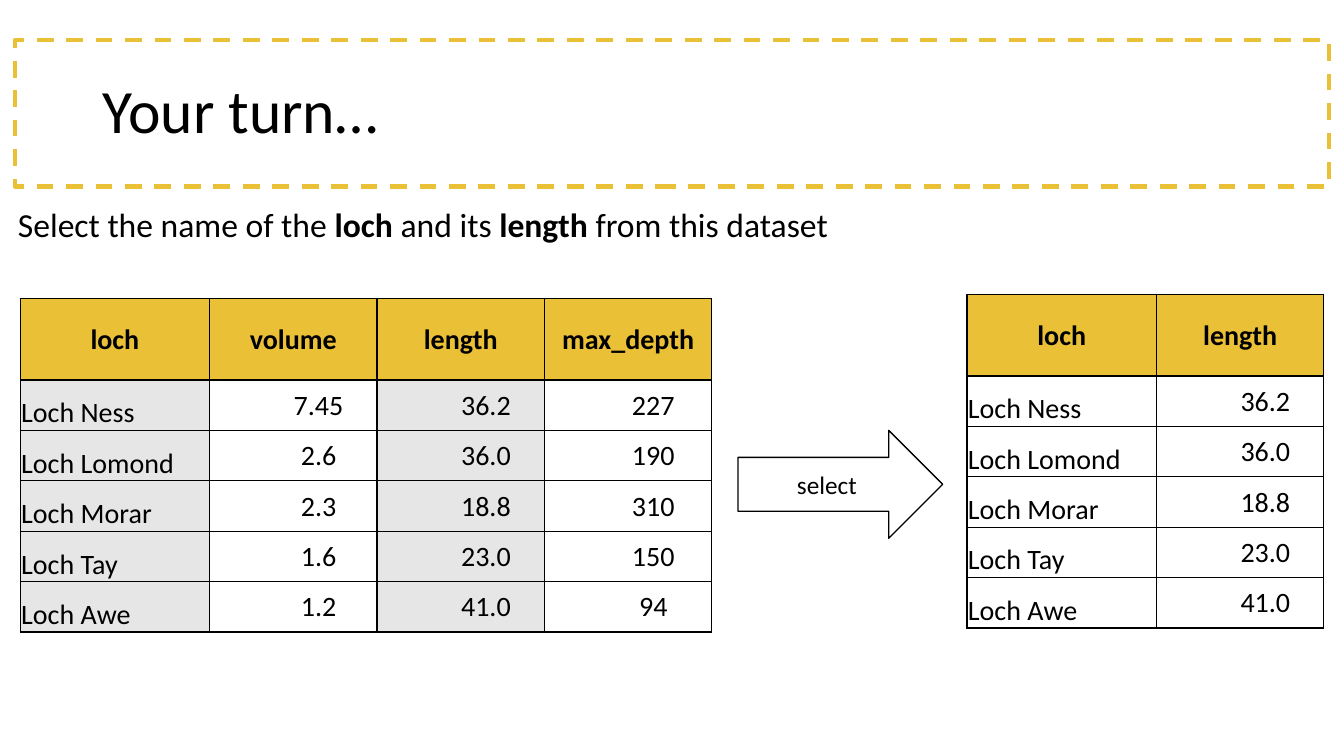
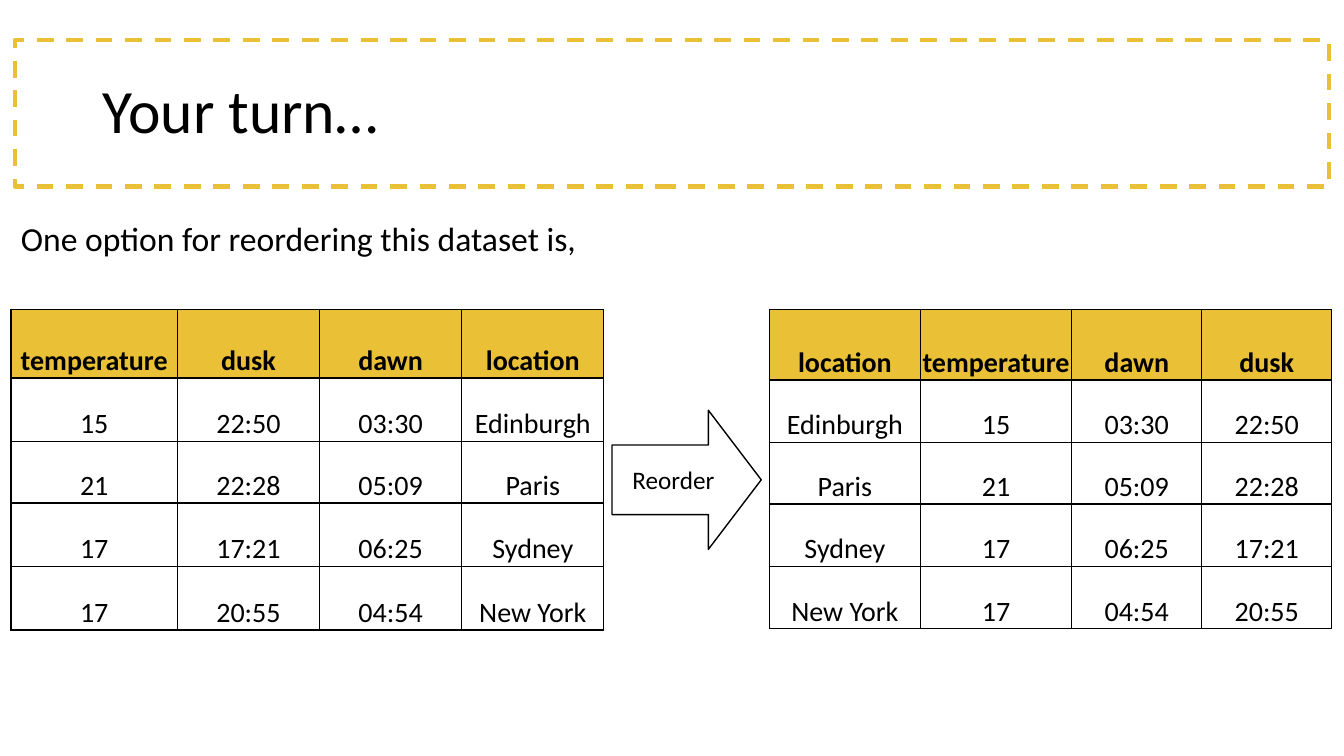
from dataclasses import dataclass

from lxml import etree
from pptx import Presentation, util as u
from pptx.dml.color import RGBColor
from pptx.enum import dml, shapes, text
from pptx.oxml import ns

CELL = u.Inches(0.1)  # one step of the layout grid
TITLE_ONLY = 5


@dataclass(frozen=True)
class Theme:
    font: str = "Calibri"
    ink: str = "000000"
    paper: str = "FFFFFF"
    gold: str = "EAC036"
    grey: str = "E7E6E6"
    title: int = 44
    lead: int = 24
    table: int = 20
    label: int = 18
    thin: int = 1
    thick: int = 3


T = Theme()
MID, LOW = text.MSO_ANCHOR.MIDDLE, text.MSO_ANCHOR.BOTTOM
LEFT, MIDDLE = text.PP_ALIGN.LEFT, text.PP_ALIGN.CENTER

LOCHS = [
    ["loch", "volume", "length", "max_depth"],
    ["Loch Ness", "7.45", "36.2", "227"],
    ["Loch Lomond", "2.6", "36.0", "190"],
    ["Loch Morar", "2.3", "18.8", "310"],
    ["Loch Tay", "1.6", "23.0", "150"],
    ["Loch Awe", "1.2", "41.0", "94"],
]
CITIES = [
    ["temperature", "dusk", "dawn", "location"],
    ["15", "22:50", "03:30", "Edinburgh"],
    ["21", "22:28", "05:09", "Paris"],
    ["17", "17:21", "06:25", "Sydney"],
    ["17", "20:55", "04:54", "New York"],
]


def grid(*steps):
    return [round(step * CELL) for step in steps]


def put(item, **values):
    for name, value in values.items():
        setattr(item, name, value)


def paint(fill, color):
    fill.solid()
    fill.fore_color.rgb = RGBColor.from_string(color)


def style(font, size, bold=False):
    put(font, name=T.font, size=u.Pt(size), bold=bold)
    font.color.rgb = RGBColor.from_string(T.ink)


def pick(rows, *names):
    """Return the named columns, in the order given."""
    order = [rows[0].index(name) for name in names]
    return [[row[col] for col in order] for row in rows]


def band(slide):
    """Draw the dashed title frame and hand it to the slide's layout."""
    frame = slide.shapes.add_shape(
        shapes.MSO_SHAPE.RECTANGLE, *grid(1.5, 4, 130.3, 14.5))
    frame.shadow.inherit = False
    frame.fill.background()
    paint(frame.line.fill, T.gold)
    put(frame.line, width=u.Pt(T.thick), dash_style=dml.MSO_LINE.DASH)
    slide.slide_layout.shapes.element.insert(2, frame.element)


def head(slide):
    title = slide.shapes.title
    left, top, width, height = grid(9.2, 4, 115, 14.5)
    put(title, left=left, top=top, width=width, height=height)
    put(title.text_frame, text="Your turn…", vertical_anchor=MID)
    para = title.text_frame.paragraphs[0]
    put(para, alignment=LEFT, line_spacing=0.9)
    style(para.runs[0].font, T.title)


def lead(slide, place, *parts):
    """Add the task line; every second part is bold."""
    frame = slide.shapes.add_textbox(*grid(*place)).text_frame
    frame.word_wrap = True
    for i, part in enumerate(parts):
        run = frame.paragraphs[0].add_run()
        run.text = part
        style(run.font, T.lead, bold=i % 2 == 1)


def edge(cell):
    props = cell._tc.get_or_add_tcPr()
    for i, side in enumerate("LRTB"):
        line = etree.Element(ns.qn(f"a:ln{side}"), w=str(u.Pt(T.thin)))
        fill = etree.SubElement(line, ns.qn("a:solidFill"))
        etree.SubElement(fill, ns.qn("a:srgbClr"), val=T.ink)
        props.insert(i, line)


def fill_in(cell, words, color, anchor, align=MIDDLE, bold=False, inset=False):
    pad = u.Inches(0.01)
    put(cell, text=words, vertical_anchor=anchor, margin_left=pad,
        margin_right=pad, margin_top=pad, margin_bottom=0)
    paint(cell.fill, color)
    edge(cell)
    para = cell.text_frame.paragraphs[0]
    para.alignment = align
    if inset:
        para.level = 1
        props = para._p.get_or_add_pPr()
        props.set("marL", str(u.Inches(0.5)))
        props.set("indent", "0")
    style(para.runs[0].font, T.table, bold)


def loch_cell(col):
    if col == 0:
        return dict(anchor=LOW, align=LEFT)
    return dict(anchor=MID, inset=True)


def city_cell(col):
    return dict(anchor=LOW)


def table(slide, spot, data, wide, high, body, top=LOW, shade=()):
    """Add a table; body(col) gives the format of the cells below the header."""
    size = sum(wide), sum(high)
    item = slide.shapes.add_table(
        len(data), len(data[0]), *grid(*spot, *size)).table
    put(item, first_row=False, horz_banding=False)
    for col, width in zip(item.columns, grid(*wide)):
        col.width = width
    for row, height in zip(item.rows, grid(*high)):
        row.height = height
    for r, row in enumerate(data):
        for c, words in enumerate(row):
            if r == 0:
                look = dict(color=T.gold, anchor=top, bold=True)
            else:
                look = dict(color=T.grey if c in shade else T.paper, **body(c))
            fill_in(item.cell(r, c), words, **look)


def arrow(slide, place, words, tip=0.5):
    item = slide.shapes.add_shape(
        shapes.MSO_SHAPE.RIGHT_ARROW, *grid(*place))
    item.shadow.inherit = False
    item.adjustments[1] = tip
    paint(item.fill, T.paper)
    paint(item.line.fill, T.ink)
    item.line.width = u.Pt(T.thin)
    put(item.text_frame, text=words, vertical_anchor=MID)
    para = item.text_frame.paragraphs[0]
    para.alignment = MIDDLE
    style(para.runs[0].font, T.label)


def lochs(slide):
    lead(slide, (0.8, 19.7, 95.6, 5), "Select the name of the ", "loch",
         " and its ", "length ", "from this dataset")
    first, other = 18.8, 16.6
    look = dict(high=[8.1] + [5] * 5, body=loch_cell, top=MID)
    table(slide, (2, 29.6), LOCHS, [first] + [other] * 3, shade=(0, 2), **look)
    table(slide, (95.9, 29.2), pick(LOCHS, "loch", "length"),
          [first, other], **look)
    arrow(slide, (73.2, 42.7, 20.3, 10.7), "select")


def cities(slide):
    lead(slide, (1.1, 21.1, 113.1, 5),
         "One option for reordering this dataset is,")
    top = 30.7
    table(slide, (76.3, top),
          pick(CITIES, "location", "temperature", "dawn", "dusk"),
          [15, 15, 12.9, 12.9], [7, 6.2, 6.1, 6.2, 6.2], city_cell)
    table(slide, (1.1, top), CITIES,
          [16.5] + [14.1] * 3, [6.8, 6.3, 6.1, 6.3, 6.3], city_cell)
    arrow(slide, (60.7, 40.7, 14.8, 13.8), "Reorder", tip=0.38)


def main():
    deck = Presentation()
    put(deck, slide_width=u.Inches(13.33), slide_height=u.Inches(7.5))
    layout = deck.slide_layouts[TITLE_ONLY]
    for i, build in enumerate((lochs, cities)):
        slide = deck.slides.add_slide(layout)
        if i == 0:
            band(slide)
        head(slide)
        build(slide)
    deck.save("out.pptx")


if __name__ == "__main__":
    main()
